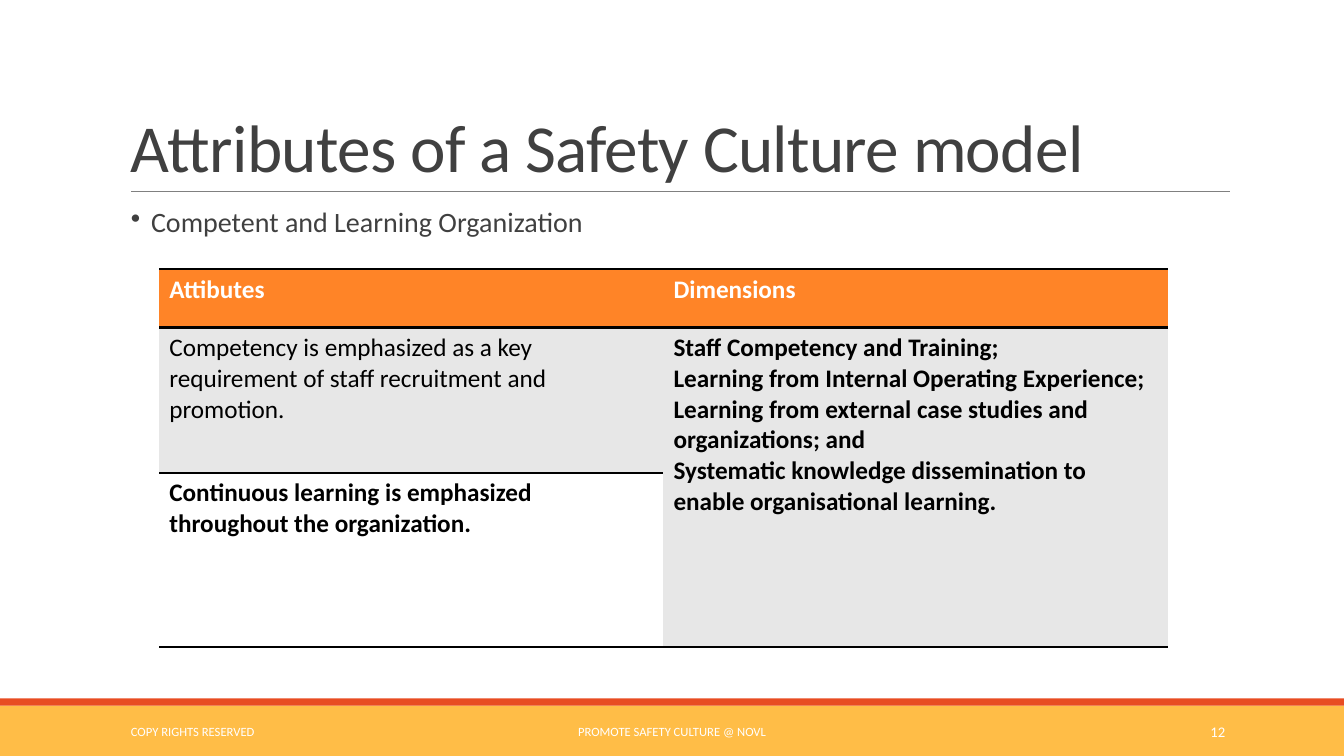
from dataclasses import dataclass

from lxml.etree import SubElement
from pptx import Presentation
from pptx.dml.color import RGBColor
from pptx.enum.shapes import MSO_CONNECTOR as Link, MSO_SHAPE as Shape
from pptx.enum.text import MSO_ANCHOR as Anchor, PP_ALIGN as Align
from pptx.oxml.ns import qn
from pptx.util import Inches, Pt


@dataclass(frozen=True)
class Theme:
    """Colours, type sizes and font of the slide."""
    font: str = "Calibri"
    ink: str = "404040"
    black: str = "000000"
    white: str = "FFFFFF"
    rule: str = "808080"
    amber: str = "FFBD47"
    red: str = "E84C22"
    head: str = "FF8427"
    band: str = "E7E7E7"
    title: float = 48
    body: float = 20
    cell: float = 18
    foot: float = 9
    page: float = 10.5


THEME = Theme()
PLAIN = "{2D5ABB26-0587-4C30-8999-92F81FD0307C}"


def style(frame, size, color, bold=False, align=Align.LEFT):
    """Format every paragraph and run of a text frame."""
    for para in frame.paragraphs:
        para.alignment = align
        for run in para.runs:
            font = run.font
            font.name, font.size, font.bold = THEME.font, Pt(size), bold
            font.color.rgb = RGBColor.from_string(color)


def label(slide, box, text, size, color, anchor=Anchor.TOP, align=Align.LEFT):
    """Add a wrapped text box and return its frame."""
    frame = slide.shapes.add_textbox(*map(Inches, box)).text_frame
    frame.word_wrap = True
    frame.vertical_anchor = anchor
    frame.text = text
    style(frame, size, color, align=align)
    return frame


def bar(slide, box, color):
    """Add a flat filled rectangle."""
    shape = slide.shapes.add_shape(Shape.RECTANGLE, *map(Inches, box))
    shape.shadow.inherit = False
    shape.fill.solid()
    shape.fill.fore_color.rgb = RGBColor.from_string(color)
    shape.line.fill.background()


def header(slide, box):
    """Place the title with the thin rule along its foot."""
    left, top, width, height = box
    frame = label(slide, box, "Attributes of a Safety Culture model",
                  THEME.title, THEME.ink, Anchor.BOTTOM)
    para = frame.paragraphs[0]
    para.line_spacing = 0.85
    para.runs[0].font._element.set("spc", "-50")
    base = Inches(top + height)
    line = slide.shapes.add_connector(
        Link.STRAIGHT, Inches(left + 0.1), base, Inches(left + width), base)
    line.line.color.rgb = RGBColor.from_string(THEME.rule)
    line.line.width = Pt(0.5)
    SubElement(line._element.spPr, qn("a:effectLst"))


def topic(slide, box):
    """Place the bulleted line under the title."""
    frame = label(slide, box, "Competent and Learning Organization",
                  THEME.body, THEME.ink)
    para = frame.paragraphs[0]
    para.line_spacing = 0.9
    props = para._p.get_or_add_pPr()
    props.set("marL", str(Inches(0.2)))
    props.set("indent", str(Inches(-0.2)))
    SubElement(props, qn("a:buChar"), char="•")


def edge(cell, *sides):
    """Draw black borders on the given sides of a cell, in schema order."""
    props = cell._tc.get_or_add_tcPr()
    for spot, side in enumerate(sides):
        line = props.makeelement(qn(f"a:{side}"), {"w": str(Pt(2))})
        fill = SubElement(line, qn("a:solidFill"))
        SubElement(fill, qn("a:srgbClr"), val=THEME.black)
        props.insert(spot, line)


def grid(slide, box):
    """Place the table of attributes and dimensions."""
    left, top, width, height = box
    frame = slide.shapes.add_table(3, 2, *map(Inches, box))
    table = frame.table
    table.horz_banding = False
    table._tbl.tblPr.find(qn("a:tableStyleId")).text = PLAIN
    for col in table.columns:
        col.width = Inches(width / 2)
    for row, tall in zip(table.rows, (0.58, 1.44, height - 2.02)):
        row.height = Inches(tall)
    table.cell(1, 1).merge(table.cell(2, 1))
    points = "\n".join((
        "Staff Competency and Training;",
        "Learning from Internal Operating Experience;",
        "Learning from external case studies and organizations; and",
        "Systematic knowledge dissemination to enable organisational learning."))
    cells = (
        (0, 0, "Attibutes", THEME.head, THEME.white, True),
        (0, 1, "Dimensions", THEME.head, THEME.white, True),
        (1, 0, "Competency is emphasized as a key requirement of staff "
               "recruitment and promotion.", THEME.band, THEME.black, False),
        (1, 1, points, THEME.band, THEME.black, True),
        (2, 0, "Continuous learning is emphasized throughout the "
               "organization.", THEME.white, THEME.black, True))
    for row, col, text, fill, color, bold in cells:
        cell = table.cell(row, col)
        cell.text_frame.text = text
        cell.fill.solid()
        cell.fill.fore_color.rgb = RGBColor.from_string(fill)
        style(cell.text_frame, THEME.cell, color, bold)
    for col in range(2):
        edge(table.cell(0, col), "lnT", "lnB")
        edge(table.cell(2, col), "lnB")
    edge(table.cell(1, 0), "lnT")
    edge(table.cell(1, 1), "lnT", "lnB")


def footer(slide, box):
    """Place the two colour bars and the three footer texts."""
    left, top, width, height = box
    bar(slide, (left, top + 0.07, width, height - 0.07), THEME.amber)
    bar(slide, (left, top, width, 0.07), THEME.red)
    parts = (
        (1.2, 2.7, "COPY RIGHTS RESERVED", THEME.foot, Align.LEFT),
        (4.03, 5.27, "PROMOTE SAFETY CULTURE @ NOVL", THEME.foot, Align.CENTER),
        (10.82, 1.43, "12", THEME.page, Align.RIGHT))
    for shift, wide, text, size, align in parts:
        label(slide, (left + shift, top + 0.13, wide, 0.4), text, size,
              THEME.white, Anchor.MIDDLE, align)


def main():
    """Build the slide and save it."""
    deck = Presentation()
    deck.slide_width, deck.slide_height = Inches(13.33), Inches(7.5)
    slide = deck.slides.add_slide(deck.slide_layouts[6])
    footer(slide, (0, 6.93, 13.33, 0.57))
    header(slide, (1.2, 0.31, 11, 1.59))
    topic(slide, (1.2, 2.02, 11, 0.5))
    grid(slide, (1.58, 2.67, 10, 3.75))
    deck.save("out.pptx")


if __name__ == "__main__":
    main()
